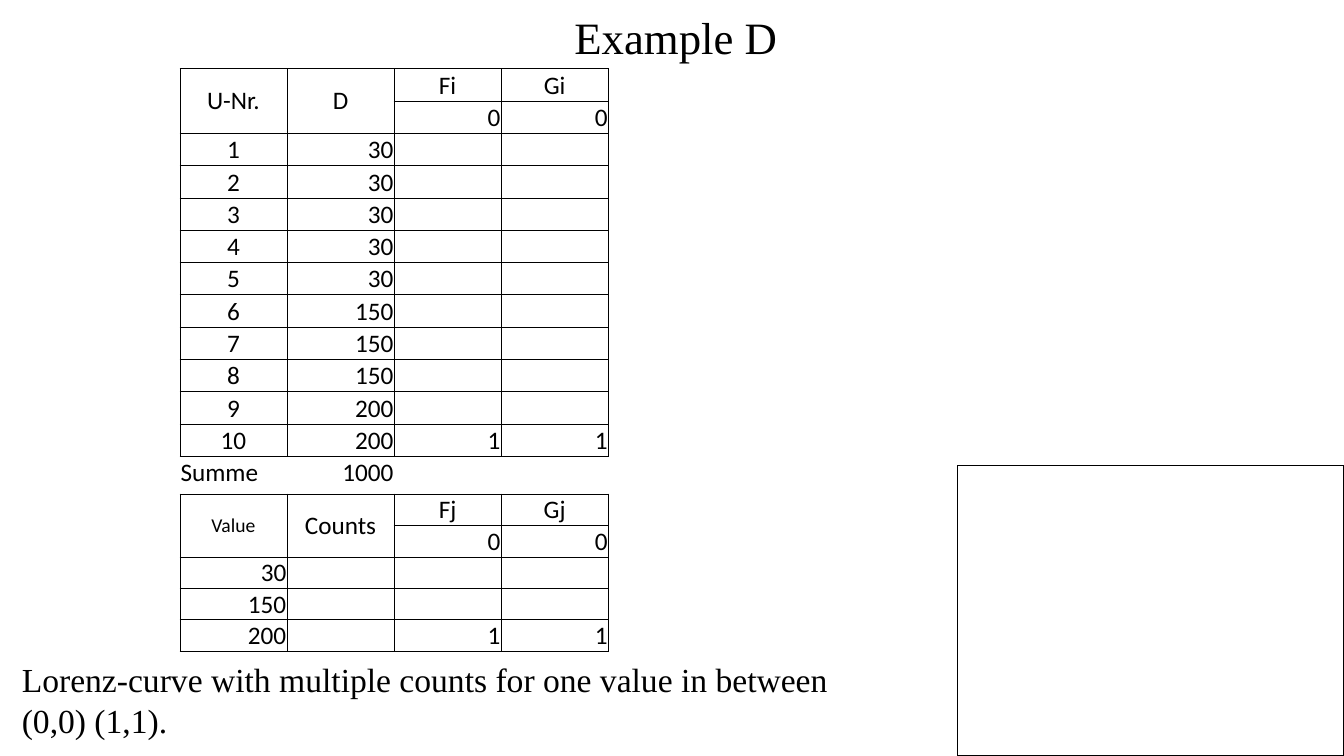
from dataclasses import dataclass

from lxml import etree
from pptx import Presentation
from pptx import util as u
from pptx.dml.color import RGBColor
from pptx.enum import shapes, text
from pptx.oxml import ns

Pt = u.Pt
COLORS = {"ink": "000000"}
INK = RGBColor.from_string(COLORS["ink"])
ALIGN = text.PP_ALIGN
ANCHOR = text.MSO_ANCHOR
COLUMN_WIDTH = 76.5


@dataclass
class TextLine:
    content: str
    left: float
    top: float
    width: float
    height: float
    size: float
    align: ALIGN


@dataclass
class FrequencyTable:
    top: float
    row_height: float
    header: list[str]
    rows: list[list[str]]
    key_align: ALIGN
    key_size: float = 18
    has_total: bool = False


def write(paragraph, content: str, size: float, font: str, align: ALIGN) -> None:
    paragraph.alignment = align
    run = paragraph.add_run()
    run.text = content
    for name, value in {"size": Pt(size), "name": font}.items():
        setattr(run.font, name, value)
    run.font.color.rgb = INK


def add_text(slide, line: TextLine) -> None:
    box = slide.shapes.add_textbox(
        Pt(line.left), Pt(line.top), Pt(line.width), Pt(line.height))
    box.text_frame.word_wrap = True
    write(box.text_frame.paragraphs[0], line.content, line.size,
          "Times New Roman", line.align)


def set_borders(cell, drawn_sides: str) -> None:
    properties = cell._tc.get_or_add_tcPr()
    for side in "LRTB":
        border = etree.SubElement(properties, ns.qn(f"a:ln{side}"), w=str(Pt(0.5)))
        if side in drawn_sides:
            fill = etree.SubElement(border, ns.qn("a:solidFill"))
            etree.SubElement(fill, ns.qn("a:srgbClr"), val=COLORS["ink"])
        else:
            etree.SubElement(border, ns.qn("a:noFill"))


def add_frequency_table(slide, data: FrequencyTable) -> None:
    # The first two columns have headers two rows high
    grid = [data.header, ["", "", "0", "0"], *data.rows]
    columns = len(data.header)
    frame = slide.shapes.add_table(
        len(grid), columns, Pt(128.5), Pt(data.top),
        Pt(COLUMN_WIDTH * columns), Pt(data.row_height * len(grid)))
    table = frame.table
    table.first_row = table.horz_banding = False
    for column in table.columns:
        column.width = Pt(COLUMN_WIDTH)
    for row in table.rows:
        row.height = Pt(data.row_height)

    cell_format = {"margin_left": Pt(0.5), "margin_right": Pt(0.5),
                   "margin_top": Pt(0.5), "margin_bottom": 0}
    for r, values in enumerate(grid):
        is_total = data.has_total and r == len(grid) - 1
        for c, value in enumerate(values):
            cell = table.cell(r, c)
            for name, setting in cell_format.items():
                setattr(cell, name, setting)
            tall_header = r == 0 and c < 2
            cell.vertical_anchor = ANCHOR.MIDDLE if tall_header else ANCHOR.BOTTOM
            set_borders(cell, "T" if is_total else "LRTB")
            cell.fill.background()
            if not value:
                continue
            if r == 0:
                align = ALIGN.CENTER
            elif c == 0:
                align = ALIGN.LEFT if is_total else data.key_align
            else:
                align = ALIGN.RIGHT
            size = data.key_size if r == c == 0 else 18
            write(cell.text_frame.paragraphs[0], value, size, "Calibri", align)
    for c in range(2):
        table.cell(0, c).merge(table.cell(1, c))


def add_curve_frame(slide) -> None:
    shape = slide.shapes.add_shape(
        shapes.MSO_SHAPE.RECTANGLE, Pt(684), Pt(332.6), Pt(276), Pt(207.4))
    shape.shadow.inherit = False
    shape.fill.background()
    shape.line.color.rgb = INK
    shape.line.width = Pt(1)


VALUES = [30] * 5 + [150] * 3 + [200] * 2
UNIT_ROWS = [[str(number), str(value), "", ""]
             for number, value in enumerate(VALUES, start=1)]
UNIT_ROWS[-1][2:] = ["1", "1"]
UNIT_ROWS.append(["Summe", str(sum(VALUES)), "", ""])
VALUE_ROWS = [[str(value), "", "", ""] for value in sorted(set(VALUES))]
VALUE_ROWS[-1][2:] = ["1", "1"]

TEXTS = [
    TextLine("Example D", 134, 3.6, 697.5, 51, 32, ALIGN.CENTER),
    TextLine("Lorenz-curve with multiple counts for one value in between (0,0) (1,1).",
             8.5, 467.3, 623, 72, 24, ALIGN.LEFT),
]
TABLES = [
    FrequencyTable(49, 23.1, ["U-Nr.", "D", "Fi", "Gi"], UNIT_ROWS,
                   ALIGN.CENTER, has_total=True),
    FrequencyTable(352.8, 22.5, ["Value", "Counts", "Fj", "Gj"], VALUE_ROWS,
                   ALIGN.RIGHT, key_size=14),
]


def main() -> None:
    presentation = Presentation()
    presentation.slide_width, presentation.slide_height = Pt(960), Pt(540)
    slide = presentation.slides.add_slide(presentation.slide_layouts[6])
    # Title and task
    for line in TEXTS:
        add_text(slide, line)
    # Single units above, grouped values below
    for data in TABLES:
        add_frequency_table(slide, data)
    # Empty area for the curve
    add_curve_frame(slide)
    presentation.save("out.pptx")


if __name__ == "__main__":
    main()
